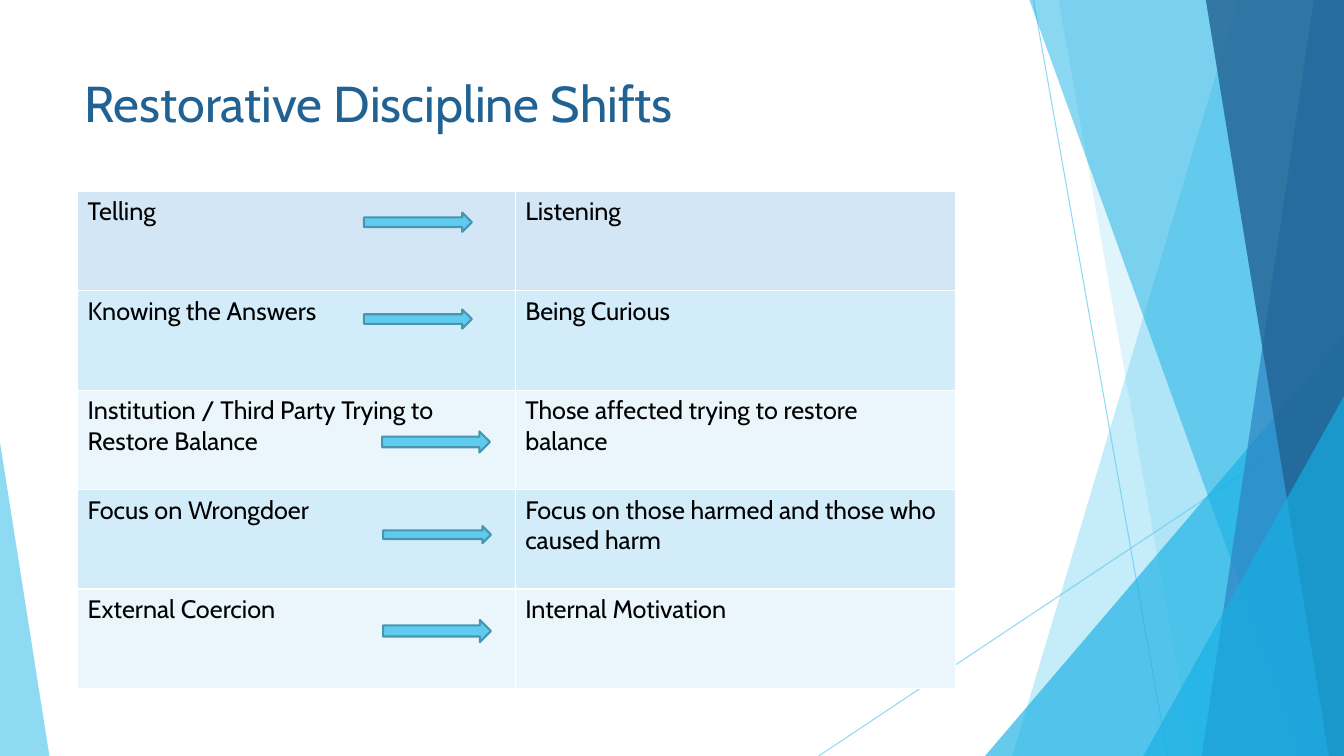
from lxml.etree import SubElement
from pptx import Presentation
from pptx.dml.color import RGBColor
from pptx.enum.shapes import MSO_CONNECTOR, MSO_SHAPE
from pptx.oxml.ns import qn
from pptx.util import Inches, Pt

WHITE = RGBColor(0xFF, 0xFF, 0xFF)
BLACK = RGBColor(0x00, 0x00, 0x00)
SKY = RGBColor(0x5F, 0xCB, 0xEF)
CYAN = RGBColor(0x17, 0xB0, 0xE4)
BLUE = RGBColor(0x2E, 0x83, 0xC3)
NAVY = RGBColor(0x22, 0x62, 0x92)
ARROW_EDGE = RGBColor(0x46, 0x96, 0xB1)
HEADER_FILL = RGBColor(0xD3, 0xE6, 0xF5)
BAND_FILLS = [RGBColor(0xEA, 0xF6, 0xFC), RGBColor(0xD2, 0xEC, 0xF9)]
RIGHT, BOTTOM = 13.33, 7.5


def write(frame, text, size=18, color=BLACK, font="Cabin"):
    """Put one formatted line of text in a text frame."""
    frame.word_wrap = True
    span = frame.paragraphs[0].add_run()
    span.text = text
    span.font.size = Pt(size)
    span.font.name = font
    span.font.bold = False
    span.font.color.rgb = color


def paint(shape, fill, color, opacity):
    """Give a fill, of a shape or its line, a see-through colour."""
    fill.solid()
    fill.fore_color.rgb = color
    tone = next(shape.element.iter(qn("a:srgbClr")))
    SubElement(tone, qn("a:alpha")).set("val", str(opacity * 1000))


deck = Presentation()
deck.slide_width, deck.slide_height = Inches(RIGHT), Inches(BOTTOM)
page = deck.slides.add_slide(deck.slide_layouts[6])
shapes = page.shapes

# Thin lines behind the facets
for ends in [(10.25, 0, 11.58, BOTTOM), (RIGHT, 4.03, 8.12, BOTTOM)]:
    ray = shapes.add_connector(MSO_CONNECTOR.STRAIGHT, *map(Inches, ends))
    ray.line.width = Pt(0.75)
    paint(ray, ray.line.fill, SKY, 70)
    SubElement(ray.element.spPr, qn("a:effectLst"))

# Facets: a band has its left edge's top and bottom x, a triangle its box and apex
facets = [
    ("band", (12.28, 10.04), SKY, 36),
    ("band", (10.5, 11.83), SKY, 20),
    ("triangle", (9.77, 3.33, 3.56, 4.17, 1), CYAN, 66),
    ("band", (10.21, 12.91), CYAN, 50),
    ("band", (13.03, 11.92), BLUE, 70),
    ("band", (11.96, 13.18), NAVY, 80),
    ("triangle", (11.34, 3.93, 1.99, 3.57, 1), CYAN, 66),
    ("triangle", (0, 4.39, 0.49, 3.11, 0), SKY, 70),
]
for kind, place, color, opacity in facets:
    if kind == "band":
        top_x, bottom_x = place
        corners = [(RIGHT, 0), (RIGHT, BOTTOM), (bottom_x, BOTTOM)]
        outline = shapes.build_freeform(Inches(top_x), 0)
        outline.add_line_segments([(Inches(x), Inches(y)) for x, y in corners])
        facet = outline.convert_to_shape()
    else:
        *bounds, apex = place
        facet = shapes.add_shape(MSO_SHAPE.ISOSCELES_TRIANGLE, *map(Inches, bounds))
        facet.adjustments[0] = apex
    facet.shadow.inherit = False
    facet.line.fill.background()
    paint(facet, facet.fill, color, opacity)

title = shapes.add_textbox(Inches(0.74), Inches(0.67), Inches(9.4), Inches(1.44))
write(title.text_frame, "Restorative Discipline Shifts", size=36, color=NAVY)

shifts = [
    ("Telling", "Listening"),
    ("Knowing the Answers", "Being Curious"),
    ("Institution / Third Party Trying to Restore Balance",
     "Those affected trying to restore balance"),
    ("Focus on Wrongdoer", "Focus on those harmed and those who caused harm"),
    ("External Coercion", "Internal Motivation"),
]
table = shapes.add_table(len(shifts), 2, Inches(0.77), Inches(1.9),
                         Inches(8.71), Inches(4.93)).table
table.first_row = table.horz_banding = False
table.columns[0].width, table.columns[1].width = Inches(4.34), Inches(4.37)
for row, shift in enumerate(shifts):
    for column, text in enumerate(shift):
        cell = table.cell(row, column)
        write(cell.text_frame, text)
        cell_format = cell._tc.get_or_add_tcPr()
        for side in ("a:lnL", "a:lnR", "a:lnT", "a:lnB"):
            border = SubElement(cell_format, qn(side), w=str(Pt(1)))
            border_fill = SubElement(border, qn("a:solidFill"))
            SubElement(border_fill, qn("a:srgbClr"), val=str(WHITE))
        cell.fill.solid()
        cell.fill.fore_color.rgb = BAND_FILLS[row % 2] if row else HEADER_FILL

# One arrow per shift: left, top, height
arrows = [(3.61, 2.11, 0.19), (3.61, 3.07, 0.19), (3.79, 4.28, 0.21),
          (3.8, 5.22, 0.17), (3.8, 6.15, 0.22)]
for left, top, height in arrows:
    arrow = shapes.add_shape(MSO_SHAPE.RIGHT_ARROW, Inches(left), Inches(top),
                             Inches(1.07), Inches(height))
    arrow.shadow.inherit = False
    arrow.fill.solid()
    arrow.fill.fore_color.rgb = SKY
    arrow.line.color.rgb = ARROW_EDGE
    arrow.line.width = Pt(1.5)

deck.save("out.pptx")
